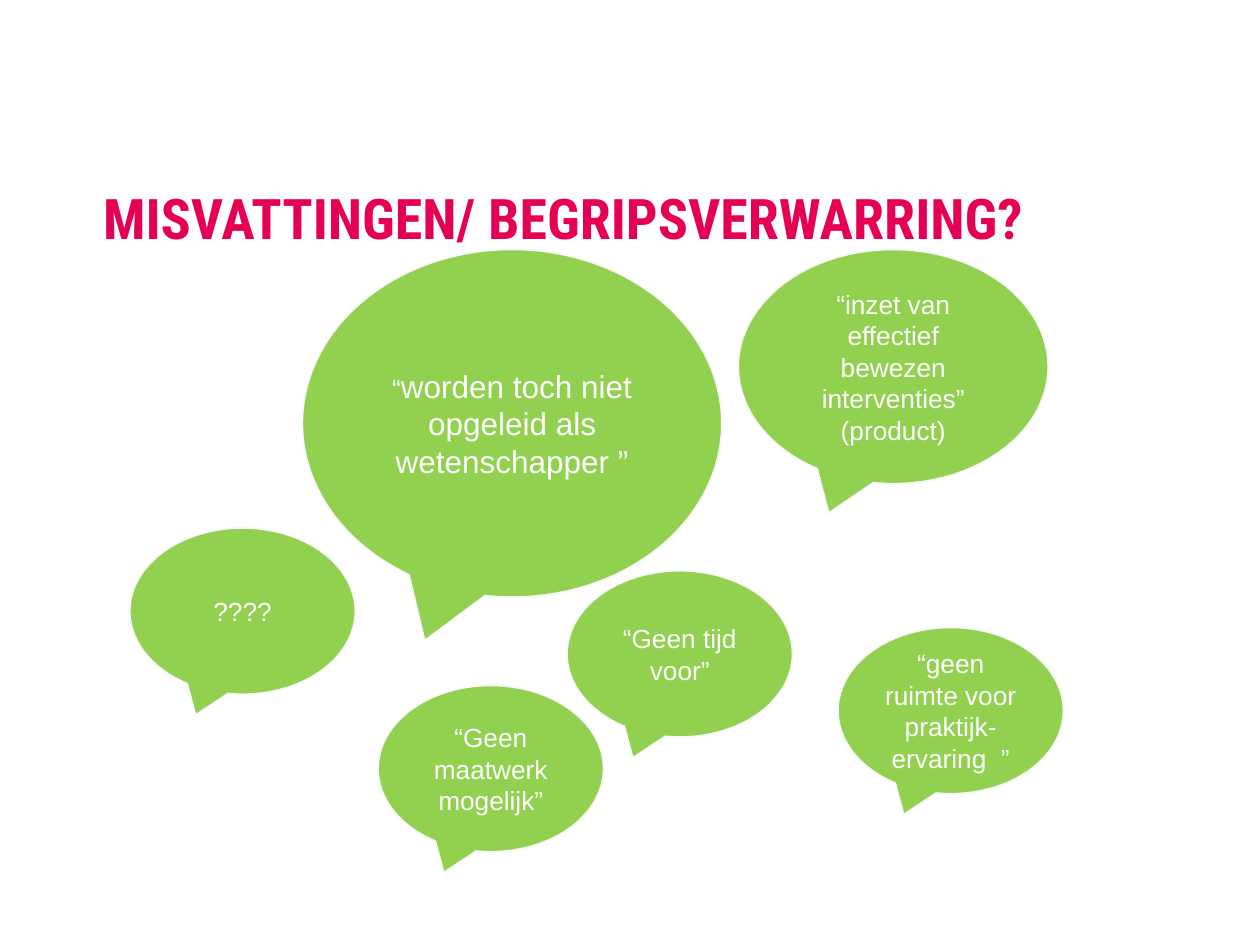
from pptx import Presentation
from pptx.dml.color import RGBColor
from pptx.enum.shapes import MSO_SHAPE
from pptx.enum.text import MSO_ANCHOR, PP_ALIGN
from pptx.util import Inches, Pt

COLORS = {"title": "E50056", "bubble": "92D050", "outline": "F8F8F8", "text": "FFFFFF"}
SMALL_BUBBLE = (1.79, 1.32)

# Left, top, size, and the (text, point size) spans of each quote
BUBBLES = [
    (5.86, 1.98, (2.46, 1.86),
     [("“inzet van effectief bewezen interventies” (product)", 15)]),
    (3, 5.44, SMALL_BUBBLE, [("“Geen maatwerk mogelijk”", 15)]),
    (6.65, 4.98, SMALL_BUBBLE, [("“geen ruimte voor praktijk-ervaring  ”", 15)]),
    (2.4, 1.98, (3.33, 2.76),
     [("“", 15), ("worden toch niet opgeleid als wetenschapper ”", 18)]),
    (1.03, 4.19, SMALL_BUBBLE, [("????", 15)]),
    (4.5, 4.53, SMALL_BUBBLE, [("“Geen tijd voor”", 15)]),
]


def color(name):
    return RGBColor.from_string(COLORS[name])


def add_span(para, text, size, font, color_name, bold=False):
    span = para.add_run()
    span.text = text
    span.font.name = font
    span.font.size = Pt(size)
    span.font.bold = bold
    span.font.color.rgb = color(color_name)


def add_title(page, left, top, width, height):
    box = page.shapes.add_textbox(Inches(left), Inches(top), Inches(width), Inches(height))
    frame = box.text_frame
    frame.word_wrap = True
    frame.vertical_anchor = MSO_ANCHOR.BOTTOM
    para = frame.paragraphs[0]
    para.line_spacing = 0.9
    add_span(para, "MISVATTINGEN/ BEGRIPSVERWARRING?", 32, "Roboto Condensed", "title", True)


def add_bubble(page, left, top, size, spans):
    width, height = size
    bubble = page.shapes.add_shape(MSO_SHAPE.OVAL_CALLOUT, Inches(left), Inches(top),
                                   Inches(width), Inches(height))
    bubble.shadow.inherit = False
    bubble.fill.solid()
    bubble.fill.fore_color.rgb = color("bubble")
    bubble.line.color.rgb = color("outline")
    bubble.line.width = Pt(1)
    frame = bubble.text_frame
    frame.word_wrap = True
    frame.vertical_anchor = MSO_ANCHOR.MIDDLE
    para = frame.paragraphs[0]
    para.alignment = PP_ALIGN.CENTER
    for text, points in spans:
        add_span(para, text, points, "Arial", "text")


def main():
    deck = Presentation()
    deck.slide_width, deck.slide_height = Inches(10), Inches(7.5)
    page = deck.slides.add_slide(deck.slide_layouts[6])

    # Speech bubbles, then the heading above them
    for left, top, size, spans in BUBBLES:
        add_bubble(page, left, top, size, spans)
    add_title(page, 0.72, 0.6, 8.62, 1.45)

    deck.save("out.pptx")


if __name__ == "__main__":
    main()
